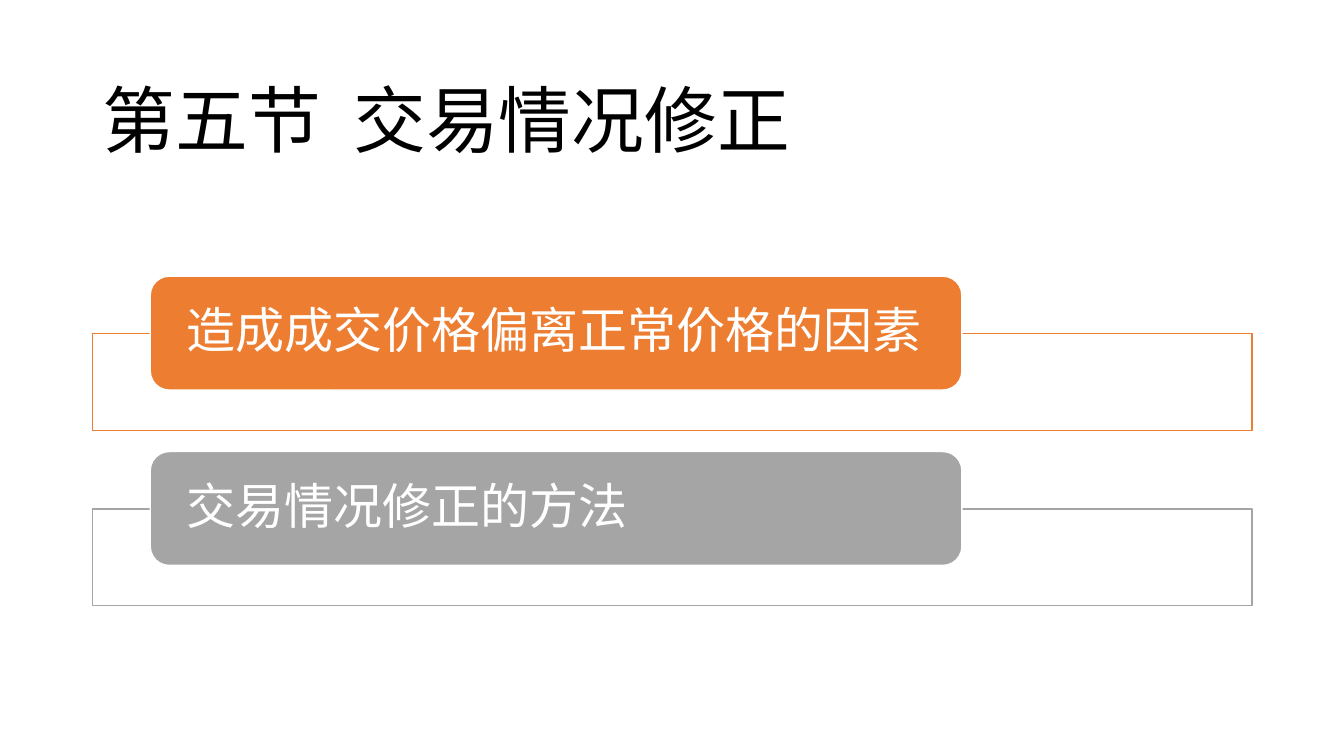
from lxml.etree import SubElement
from pptx import Presentation
from pptx.dml.color import RGBColor
from pptx.enum.shapes import MSO_SHAPE
from pptx.enum.text import MSO_ANCHOR, PP_ALIGN
from pptx.oxml.ns import qn
from pptx.util import Inches, Pt

FONT = "Noto Sans CJK SC"
WHITE = "FFFFFF"
TOPICS = [
    ("造成成交价格偏离正常价格的因素", "ED7D31"),
    ("交易情况修正的方法", "A5A5A5"),
]
FIRST_TOP = 2.74
TOPIC_STEP = 1.74
FRAME_OFFSET = 0.57


def color(value):
    return RGBColor.from_string(value)


def write(shape, text, size, ink, inset_x=0.1, inset_y=0.05):
    """Fill a shape with one left-aligned, vertically centred paragraph."""
    frame = shape.text_frame
    frame.word_wrap = True
    frame.vertical_anchor = MSO_ANCHOR.MIDDLE
    frame.margin_left = frame.margin_right = Inches(inset_x)
    frame.margin_top = frame.margin_bottom = Inches(inset_y)
    para = frame.paragraphs[0]
    para.alignment = PP_ALIGN.LEFT
    para.line_spacing = 0.9
    span = para.add_run()
    span.text = text
    span.font.size = Pt(size)
    span.font.color.rgb = color(ink)
    span.font.name = FONT
    SubElement(span.font._element, qn("a:ea"), typeface=FONT)


class SlideBuilder:
    def __init__(self, deck):
        self.page = deck.slides.add_slide(deck.slide_layouts[6])

    def title(self, text, left, top, width, height):
        box = self.page.shapes.add_textbox(
            Inches(left), Inches(top), Inches(width), Inches(height))
        write(box, text, size=52, ink="000000")

    def panel(self, kind, left, top, width, height, fill, line, opacity=100):
        shape = self.page.shapes.add_shape(
            kind, Inches(left), Inches(top), Inches(width), Inches(height))
        shape.shadow.inherit = False
        shape.fill.solid()
        shape.fill.fore_color.rgb = color(fill)
        shape.line.color.rgb = color(line)
        shape.line.width = Pt(1)
        if opacity < 100:
            tint = shape._element.spPr.find(qn("a:solidFill")).find(qn("a:srgbClr"))
            SubElement(tint, qn("a:alpha"), val=str(opacity * 1000))
        return shape

    def topic(self, text, accent, top):
        """Draw an outlined frame with a coloured label over its top edge."""
        self.panel(MSO_SHAPE.RECTANGLE, 0.92, top + FRAME_OFFSET, 11.5, 0.96,
                   fill=WHITE, line=accent, opacity=90)
        label = self.panel(MSO_SHAPE.ROUNDED_RECTANGLE, 1.49, top, 8.05, 1.13,
                           fill=accent, line=WHITE)
        write(label, text, size=35, ink=WHITE, inset_x=0.3, inset_y=0)


def main():
    deck = Presentation()
    deck.slide_width = Inches(13.33)
    deck.slide_height = Inches(7.5)
    builder = SlideBuilder(deck)
    builder.title("第五节  交易情况修正", 0.92, 0.61, 11.5, 1.24)
    for index, (text, accent) in enumerate(TOPICS):
        builder.topic(text, accent, FIRST_TOP + index * TOPIC_STEP)
    deck.save("out.pptx")


if __name__ == "__main__":
    main()
